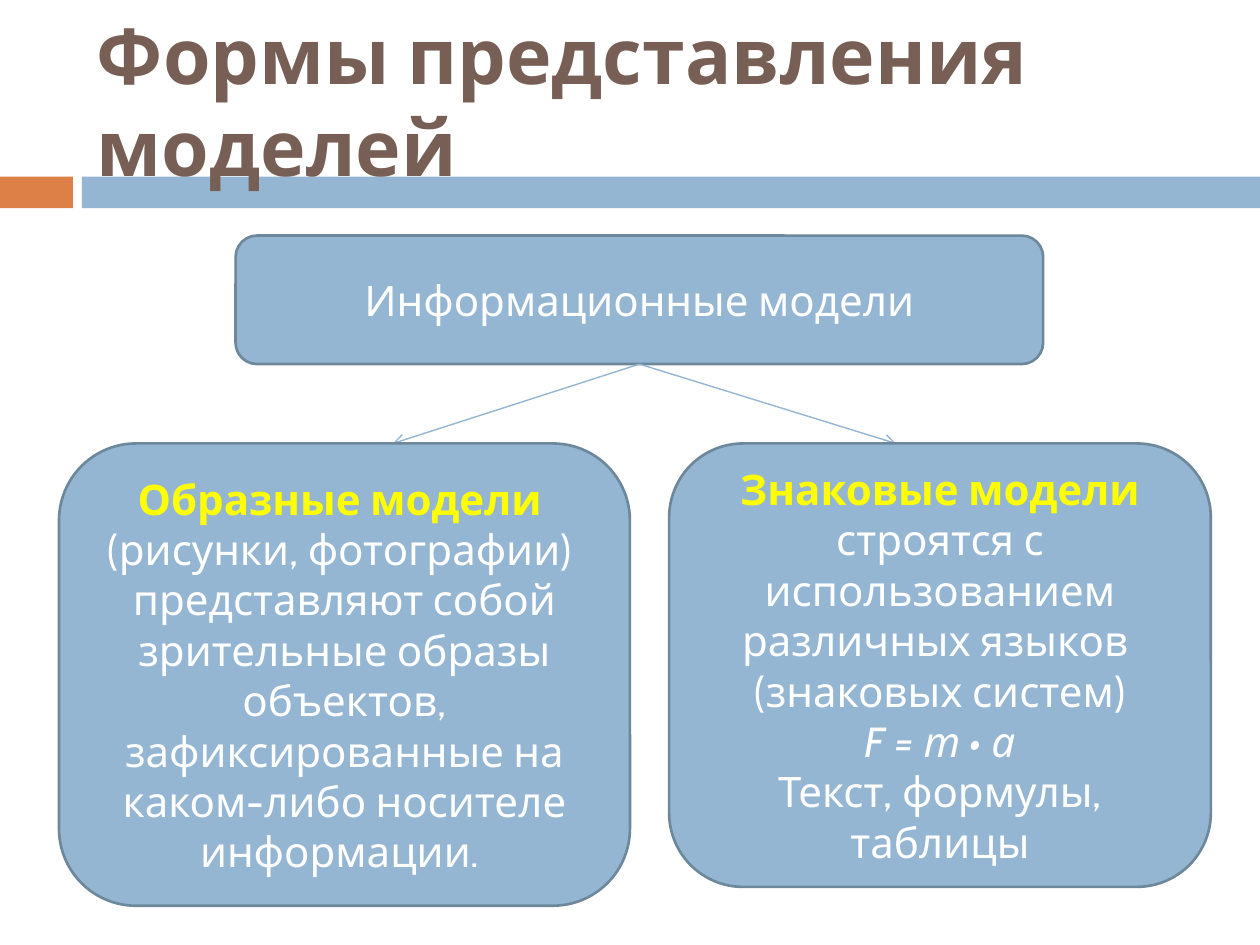
"""Build a slide on the forms in which models are represented."""
from dataclasses import dataclass

from lxml import etree
from pptx import Presentation
from pptx.dml.color import RGBColor
from pptx.enum.shapes import MSO_CONNECTOR, MSO_SHAPE
from pptx.enum.text import MSO_ANCHOR, MSO_AUTO_SIZE, PP_ALIGN
from pptx.oxml.ns import qn
from pptx.util import Cm, Pt

RECTANGLE, ROUNDED = MSO_SHAPE.RECTANGLE, MSO_SHAPE.ROUNDED_RECTANGLE
STRAIGHT = MSO_CONNECTOR.STRAIGHT
MIDDLE, NO_FIT = MSO_ANCHOR.MIDDLE, MSO_AUTO_SIZE.NONE
LEFT, CENTER = PP_ALIGN.LEFT, PP_ALIGN.CENTER
BOTTOM_SIDE = 2
TITLE_ONLY = 5


@dataclass(frozen=True)
class Theme:
    font: str = "Cabin"
    title: RGBColor = RGBColor.from_string("775F55")
    accent: RGBColor = RGBColor.from_string("DD8047")
    blue: RGBColor = RGBColor.from_string("94B6D2")
    border: RGBColor = RGBColor.from_string("6D879B")
    heading: RGBColor = RGBColor.from_string("FFFF00")
    text: RGBColor = RGBColor.from_string("FFFFFF")
    title_size: Pt = Pt(44)
    text_size: Pt = Pt(24)


theme = Theme()


def add_block(kind, place, color):
    block = slide.shapes.add_shape(kind, *map(Cm, place))
    block.shadow.inherit = False
    block.fill.solid()
    block.fill.fore_color.rgb = color
    block.line.fill.background()
    return block


def add_model(place, lines, heading=None, formula=None):
    model = add_block(ROUNDED, place, theme.blue)
    model.line.color.rgb = theme.border
    model.line.width = Pt(1.5)
    frame = model.text_frame
    frame.word_wrap = True
    frame.vertical_anchor = MIDDLE
    frame.text = "\n".join(lines)
    for paragraph in frame.paragraphs:
        paragraph.alignment = CENTER
        font = paragraph.font
        font.name, font.size = theme.font, theme.text_size
        font.bold = paragraph.text == heading
        font.italic = paragraph.text == formula
        font.color.rgb = theme.heading if font.bold else theme.text
    return model


prs = Presentation()
prs.slide_width, prs.slide_height = Cm(25.4), Cm(19.05)
slide = prs.slides.add_slide(prs.slide_layouts[TITLE_ONLY])

add_block(RECTANGLE, (0, 3.56, 1.47, 0.64), theme.accent)
add_block(RECTANGLE, (1.65, 3.56, 23.75, 0.64), theme.blue)

title = slide.shapes.title
slide.shapes._spTree.append(title._element)
title.left, title.top, title.width, title.height = map(Cm, (1.7, 0.64, 22.66, 2.74))
title.text_frame.text = "Формы представления моделей"
title.text_frame.word_wrap = True
title.text_frame.auto_size = NO_FIT
title.text_frame.vertical_anchor = MIDDLE
heading_line = title.text_frame.paragraphs[0]
heading_line.alignment = LEFT
heading_line.font.name, heading_line.font.size = theme.font, theme.title_size
heading_line.font.bold = True
heading_line.font.color.rgb = theme.title

information_models = add_model((4.75, 4.75, 16.28, 2.59), ["Информационные модели"])

branch_top = 8.94
for branch_x in (7.92, 18.06):
    branch = slide.shapes.add_connector(
        STRAIGHT, Cm(12.89), Cm(7.34), Cm(branch_x), Cm(branch_top))
    branch.begin_connect(information_models, BOTTOM_SIDE)
    branch.line.color.rgb = theme.blue
    branch.line.width = Pt(0.79)
    etree.SubElement(branch.line._get_or_add_ln(), qn("a:tailEnd"), type="arrow")
    etree.SubElement(branch._element.spPr, qn("a:effectLst"))

image_heading, sign_heading = "Образные модели ", "Знаковые модели"
force_formula = "F = т • а"

add_model((1.19, branch_top, 11.51, 9.32), [
    image_heading,
    "(рисунки, фотографии) ",
    "представляют собой зрительные образы объектов, "
    "зафиксированные на каком-либо носителе информации. ",
], image_heading)

add_model((13.49, branch_top, 10.92, 8.94), [
    sign_heading,
    "строятся с использованием различных языков ",
    "(знаковых систем)",
    force_formula,
    "Текст, формулы, таблицы",
], sign_heading, force_formula)

prs.save("out.pptx")
